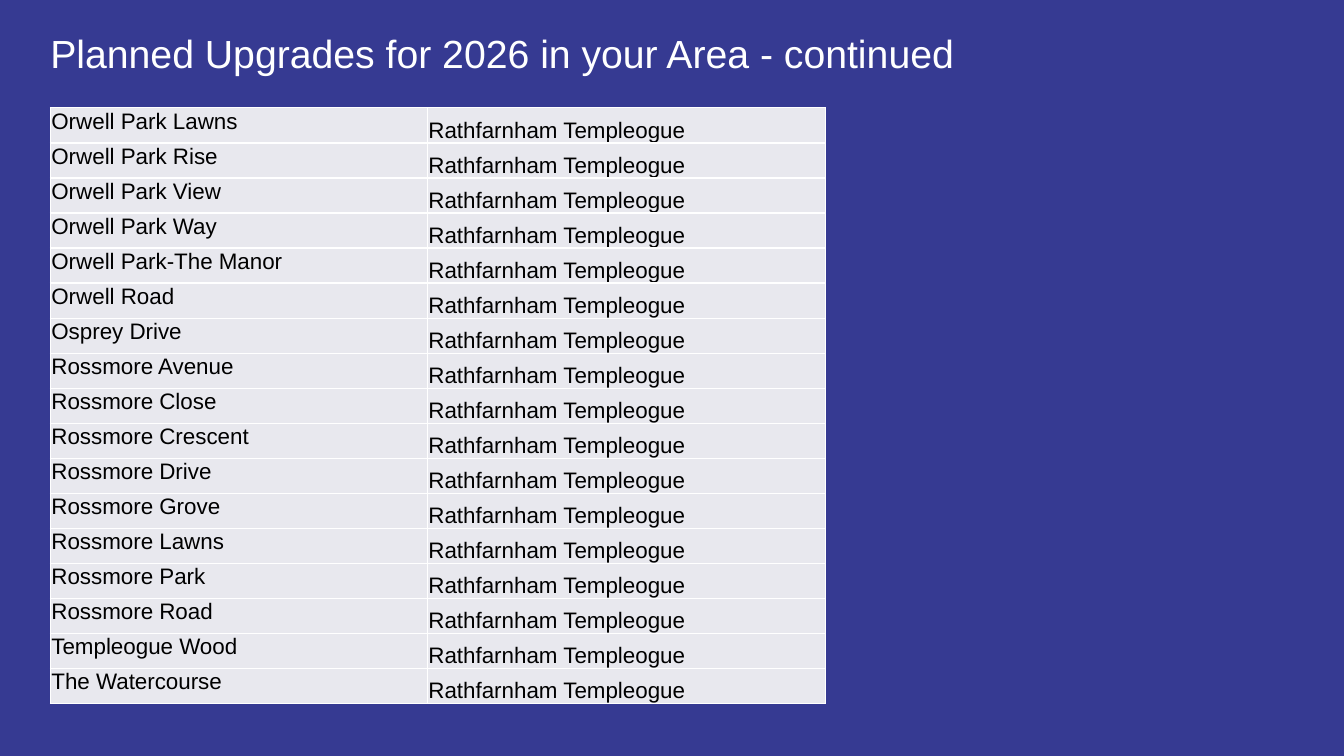
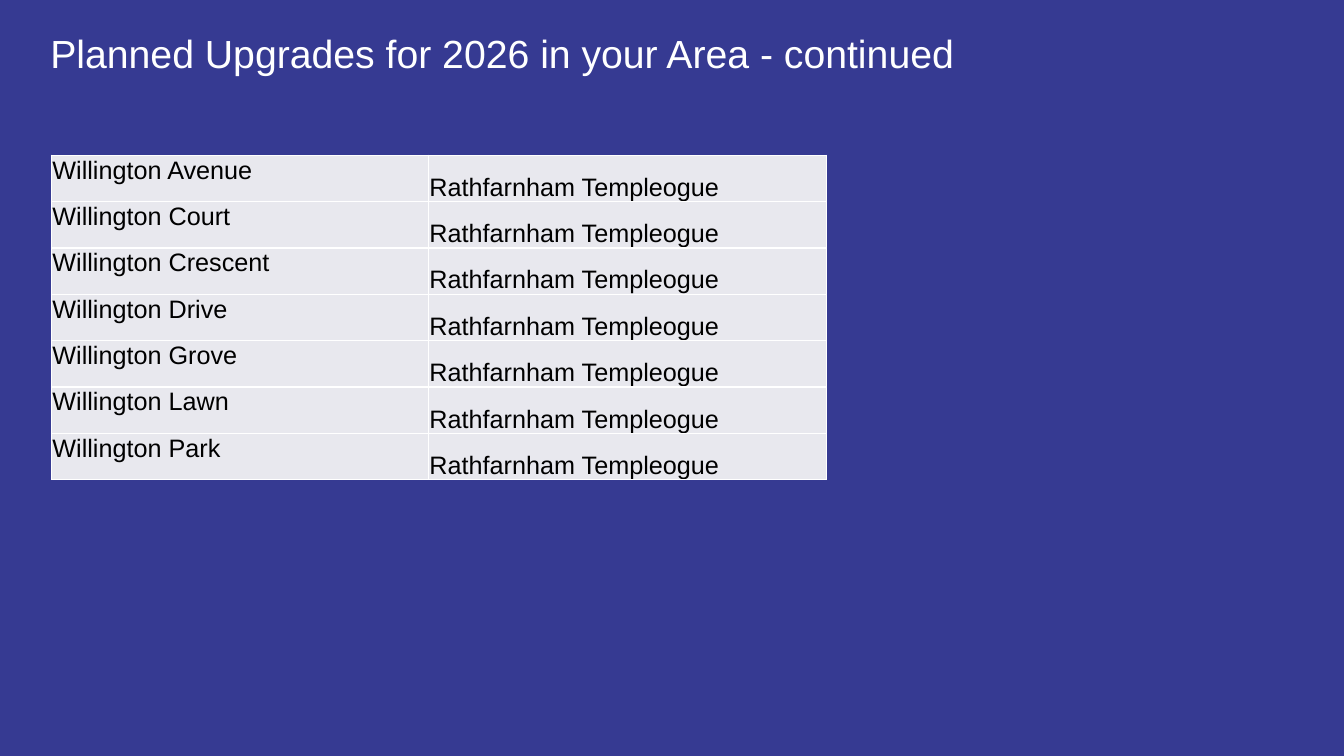
import dataclasses

import pptx
import pptx.dml.color
import pptx.enum.text
import pptx.oxml
import pptx.oxml.ns
import pptx.util

Inches = pptx.util.Inches
Pt = pptx.util.Pt
Anchor = pptx.enum.text.MSO_ANCHOR


@dataclasses.dataclass(frozen=True)
class Theme:
    back: str = "363A92"
    light: str = "FFFFFF"
    dark: str = "000000"
    cell: str = "E8E8EE"
    font: str = "Arial"
    title: int = 28
    small: int = 16
    large: int = 18
    rule: int = 1


THEME = Theme()
TITLE = "Planned Upgrades for 2026 in your Area - continued"
AREA = "Rathfarnham Templeogue"
COLS = (3.74, 3.95)
ORWELL = (
    "Orwell Park Lawns", "Orwell Park Rise", "Orwell Park View",
    "Orwell Park Way", "Orwell Park-The Manor", "Orwell Road",
    "Osprey Drive", "Rossmore Avenue", "Rossmore Close",
    "Rossmore Crescent", "Rossmore Drive", "Rossmore Grove",
    "Rossmore Lawns", "Rossmore Park", "Rossmore Road",
    "Templeogue Wood", "The Watercourse",
)
WILLINGTON = tuple(
    f"Willington {kind}"
    for kind in ("Avenue", "Court", "Crescent", "Drive", "Grove", "Lawn", "Park")
)


def paint(fill, color):
    fill.solid()
    fill.fore_color.rgb = pptx.dml.color.RGBColor.from_string(color)


def write(frame, text, size, color):
    frame.text = text
    font = frame.paragraphs[0].runs[0].font
    font.name = THEME.font
    font.size = Pt(size)
    font.color.rgb = pptx.dml.color.RGBColor.from_string(color)


def add_title(slide):
    box = slide.shapes.add_textbox(
        Inches(0.5), Inches(0.29), Inches(12.34), Inches(0.71))
    frame = box.text_frame
    frame.word_wrap = True
    frame.margin_left = frame.margin_right = 0
    frame.margin_top = frame.margin_bottom = 0
    write(frame, TITLE, THEME.title, THEME.light)


def add_border(cell):
    """Draw all four cell edges; the schema wants them ahead of the fill."""
    props = cell._tc.get_or_add_tcPr()
    for place, side in enumerate(("lnL", "lnR", "lnT", "lnB")):
        line = pptx.oxml.parse_xml(
            f'<a:{side} {pptx.oxml.ns.nsdecls("a")} w="{Pt(THEME.rule)}">'
            f'<a:solidFill><a:srgbClr val="{THEME.light}"/></a:solidFill>'
            f'</a:{side}>')
        props.insert(place, line)


def fill_cell(cell, text, size, anchor):
    cell.margin_left = cell.margin_right = cell.margin_top = Inches(0.01)
    cell.margin_bottom = 0
    cell.vertical_anchor = anchor
    paint(cell.fill, THEME.cell)
    add_border(cell)
    write(cell.text_frame, text, size, THEME.dark)


def add_roads(slide, roads, left, top, height, size):
    """List each road beside its area, in rows of equal height."""
    table = slide.shapes.add_table(
        len(roads), len(COLS), Inches(left), Inches(top),
        Inches(sum(COLS)), Inches(height)).table
    table.first_row = table.horz_banding = False
    for column, width in zip(table.columns, COLS):
        column.width = Inches(width)
    for index, road in enumerate(roads):
        fill_cell(table.cell(index, 0), road, size, Anchor.TOP)
        fill_cell(table.cell(index, 1), AREA, size, Anchor.BOTTOM)


def main():
    deck = pptx.Presentation()
    deck.slide_width = Inches(13.33)
    deck.slide_height = Inches(7.5)
    paint(deck.slide_master.background.fill, THEME.back)
    pages = (
        (ORWELL, 0.5, 1.07, 5.91, THEME.small),
        (WILLINGTON, 0.51, 1.54, 3.22, THEME.large),
    )
    for page in pages:
        slide = deck.slides.add_slide(deck.slide_layouts[6])
        add_title(slide)
        add_roads(slide, *page)
    deck.save("out.pptx")


if __name__ == "__main__":
    main()
